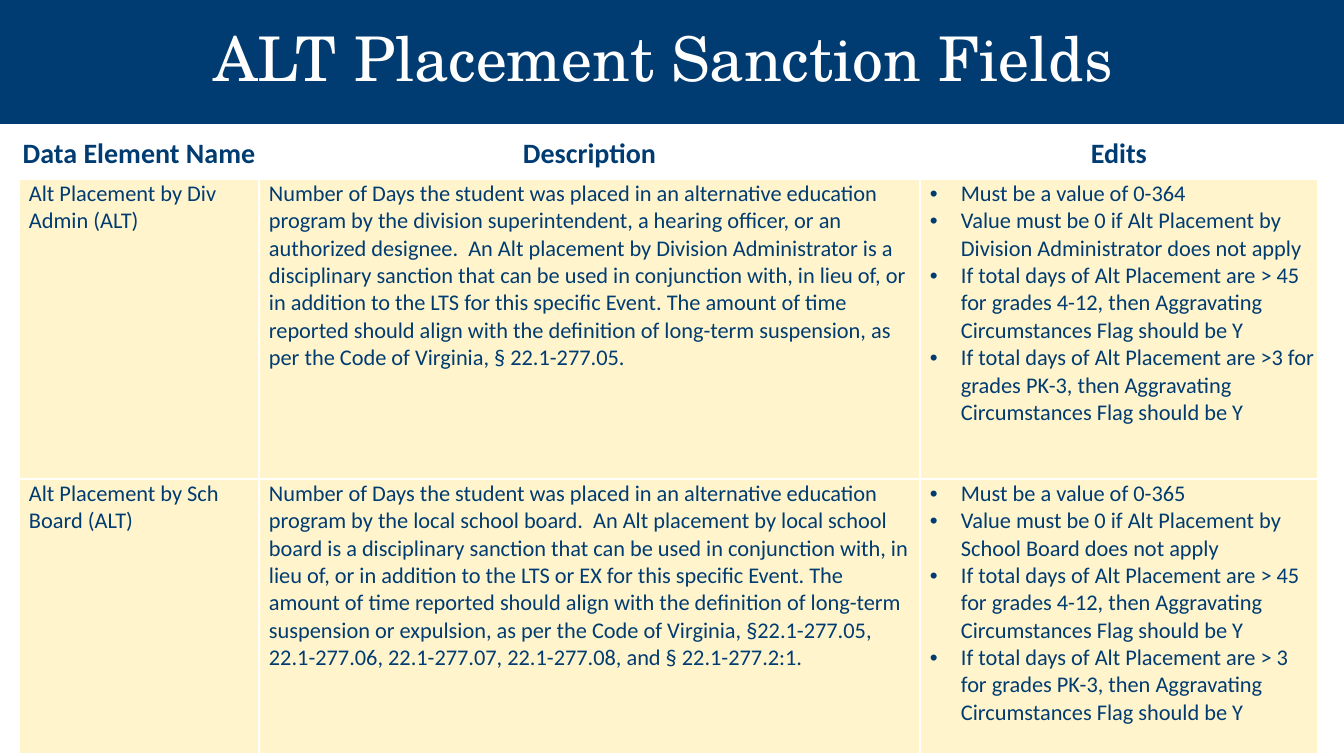
from dataclasses import dataclass

from lxml.etree import SubElement
from pptx import Presentation
from pptx.dml.color import RGBColor
from pptx.enum.shapes import MSO_SHAPE as Shape
from pptx.enum.text import MSO_ANCHOR as Anchor, PP_ALIGN as Align
from pptx.oxml import parse_xml
from pptx.oxml.ns import nsdecls, qn
from pptx.util import Emu, Pt


@dataclass(frozen=True)
class Theme:
    navy: str = "003C71"
    cream: str = "FFF4CC"
    white: str = "FFFFFF"
    title_font: str = "TeX Gyre Schola"
    body_font: str = "Calibri"
    title_size: int = 44
    header_size: int = 20
    body_size: int = 16


THEME = Theme()

TITLE = "ALT Placement Sanction Fields "
HEADERS = ["Data Element Name", "Description", "Edits"]
COLUMN_WIDTHS = [240, 661, 398]
ROW_HEIGHTS = [43, 300, 275]
BULLET_INDENT = 31

OVER_45_EDIT = ("If total days of Alt Placement are > 45 for grades 4-12, "
                "then Aggravating Circumstances Flag should be Y")

# Each field: name, description, list of edits
FIELDS = [
    ("Alt Placement by Div Admin (ALT)",
     "Number of Days the student was placed in an alternative education program by "
     "the division superintendent, a hearing officer, or an authorized designee.  An "
     "Alt placement by Division Administrator is a disciplinary sanction that can be "
     "used in conjunction with, in lieu of, or in addition to the LTS for this "
     "specific Event. The amount of time reported should align with the definition "
     "of long-term suspension, as per the Code of Virginia, § 22.1-277.05.",
     ["Must be a value of 0-364",
      "Value must be 0 if Alt Placement by Division Administrator does not apply",
      OVER_45_EDIT,
      "If total days of Alt Placement are >3 for grades PK-3, "
      "then Aggravating Circumstances Flag should be Y"]),
    ("Alt Placement by Sch Board (ALT)",
     "Number of Days the student was placed in an alternative education program by "
     "the local school board.  An Alt placement by local school board is a "
     "disciplinary sanction that can be used in conjunction with, in lieu of, or in "
     "addition to the LTS or EX for this specific Event. The amount of time reported "
     "should align with the definition of long-term suspension or expulsion, as per "
     "the Code of Virginia, §22.1-277.05, 22.1-277.06, 22.1-277.07, 22.1-277.08, and "
     "§ 22.1-277.2:1.",
     ["Must be a value of 0-365",
      "Value must be 0 if Alt Placement by School Board does not apply",
      OVER_45_EDIT,
      "If total days of Alt Placement are > 3 for grades PK-3, "
      "then Aggravating Circumstances Flag should be Y"]),
]


def px(count):
    return Emu(round(count * 914400 / 100.8))


def color(code):
    return RGBColor.from_string(code)


def write(para, text, *, font=THEME.body_font, size=THEME.body_size,
          ink=THEME.navy, bold=False, align=Align.LEFT, spacing=None, bullet=False):
    para.alignment = align
    if spacing:
        para.line_spacing = spacing
    if bullet:
        add_bullet(para)
    span = para.add_run()
    span.text = text
    span.font.name = font
    span.font.size = Pt(size)
    span.font.bold = bold
    span.font.color.rgb = color(ink)


def add_bullet(para):
    props = para._p.get_or_add_pPr()
    props.set("marL", str(px(BULLET_INDENT)))
    props.set("indent", str(-px(BULLET_INDENT)))
    SubElement(props, qn("a:buFont")).set("typeface", "Arial")
    SubElement(props, qn("a:buChar")).set("char", "•")


def set_borders(cell):
    props = cell._tc.get_or_add_tcPr()
    for place, side in enumerate(["lnL", "lnR", "lnT", "lnB"]):
        props.insert(place, parse_xml(
            f'<a:{side} {nsdecls("a")} w="{Pt(1)}"><a:solidFill>'
            f'<a:srgbClr val="{THEME.white}"/></a:solidFill></a:{side}>'))


def fill_cell(cell, lines, *, fill=None, left=10, **text_format):
    cell.margin_left = px(left)
    cell.margin_right = cell.margin_top = px(1)
    cell.margin_bottom = 0
    cell.vertical_anchor = Anchor.TOP
    if fill:
        cell.fill.solid()
        cell.fill.fore_color.rgb = color(fill)
    else:
        cell.fill.background()
    set_borders(cell)
    frame = cell.text_frame
    for index, line in enumerate(lines):
        para = frame.add_paragraph() if index else frame.paragraphs[0]
        write(para, line, **text_format)


def add_title_band(page):
    box = page.shapes.add_shape(Shape.RECTANGLE, 0, 0, px(1344), px(124))
    box.shadow.inherit = False
    box.fill.solid()
    box.fill.fore_color.rgb = color(THEME.navy)
    box.line.fill.background()
    frame = box.text_frame
    frame.word_wrap = True
    frame.vertical_anchor = Anchor.MIDDLE
    write(frame.paragraphs[0], TITLE, font=THEME.title_font, size=THEME.title_size,
          ink=THEME.white, align=Align.CENTER, spacing=0.9)


def add_field_table(page):
    table = page.shapes.add_table(
        len(ROW_HEIGHTS), len(COLUMN_WIDTHS), px(19), px(136),
        px(sum(COLUMN_WIDTHS)), px(sum(ROW_HEIGHTS))).table
    table.first_row = table.horz_banding = False
    for column, width in zip(table.columns, COLUMN_WIDTHS):
        column.width = px(width)
    for row, height in zip(table.rows, ROW_HEIGHTS):
        row.height = px(height)

    # Header row
    for index, header in enumerate(HEADERS):
        fill_cell(table.cell(0, index), [header], left=1, size=THEME.header_size,
                  bold=True, align=Align.CENTER)

    # Field rows
    for row, (name, description, edits) in enumerate(FIELDS, start=1):
        fill_cell(table.cell(row, 0), [name], fill=THEME.cream)
        fill_cell(table.cell(row, 1), [description], fill=THEME.cream)
        fill_cell(table.cell(row, 2), edits, fill=THEME.cream, bullet=True)


def main():
    deck = Presentation()
    deck.slide_width, deck.slide_height = px(1344), px(756)
    page = deck.slides.add_slide(deck.slide_layouts[6])
    add_title_band(page)
    add_field_table(page)
    deck.save("out.pptx")


if __name__ == "__main__":
    main()
